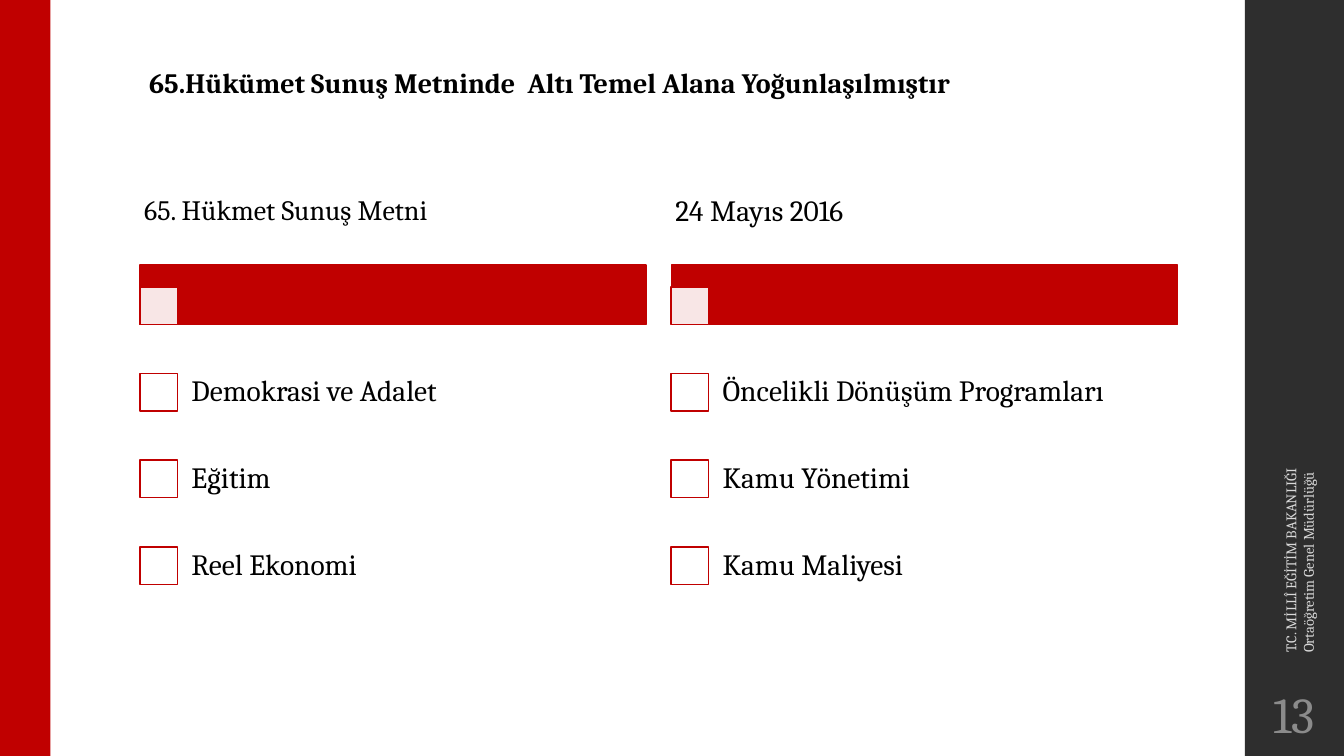
"""Builds the slide on the six focus areas of the government programme."""
from lxml import etree
from pptx import Presentation
from pptx.dml.color import RGBColor
from pptx.enum.shapes import MSO_SHAPE
from pptx.enum.text import MSO_ANCHOR, MSO_AUTO_SIZE, PP_ALIGN
from pptx.oxml.ns import qn
from pptx.util import Pt

TITLE = "65.Hükümet Sunuş Metninde  Altı Temel Alana Yoğunlaşılmıştır"
COLUMNS = [
    ("65. Hükmet Sunuş Metni", 20,
     ["Demokrasi ve Adalet", "Eğitim", "Reel Ekonomi"]),
    ("24 Mayıs 2016", 21,
     ["Öncelikli Dönüşüm Programları", "Kamu Yönetimi", "Kamu Maliyesi"]),
]
MINISTRY = ["T.C. MİLLÎ EĞİTİM BAKANLIĞI", "Ortaöğretim Genel Müdürlüğü"]
PAGE = "13"

FONT = "Cambria"
RED = RGBColor(0xC0, 0x00, 0x00)
DARK = RGBColor(0x2E, 0x2E, 0x2E)
WHITE = RGBColor(0xFF, 0xFF, 0xFF)
BLACK = RGBColor(0x00, 0x00, 0x00)
GREY = RGBColor(0x8B, 0x8B, 0x8B)
PALE = RGBColor(0xD8, 0xD8, 0xD8)
RECT = MSO_SHAPE.RECTANGLE
MIDDLE, BOTTOM = MSO_ANCHOR.MIDDLE, MSO_ANCHOR.BOTTOM
LEFT, CENTER = PP_ALIGN.LEFT, PP_ALIGN.CENTER
NO_FIT = MSO_AUTO_SIZE.NONE

SLIDE_W, SLIDE_H = 960, 540
SIDE_X = 889.2
COL_X, COL_STEP, COL_W = 100.08, 379.44, 361.44
HEAD_Y, HEAD_H = 113.04, 76.32
BAR_Y, BAR_H = 189.36, 42.48
BOX = 26.64
ROW_Y, ROW_H = 249.12, 62
ITEM_DX = 25.2


def add_rect(slide, x, y, w, h, fill, line=None, opacity=None):
    sp = slide.shapes.add_shape(RECT, Pt(x), Pt(y), Pt(w), Pt(h))
    sp.shadow.inherit = False
    sp.fill.solid()
    sp.fill.fore_color.rgb = fill
    if opacity is not None:
        clr = sp._element.spPr.find(".//" + qn("a:srgbClr"))
        etree.SubElement(clr, qn("a:alpha"), val=str(opacity * 1000))
    if line is None:
        sp.line.fill.background()
    else:
        sp.line.color.rgb = line
        sp.line.width = Pt(1.1)


def put_text(sp, lines, size, color=BLACK, bold=False, align=LEFT,
             anchor=MIDDLE, inset=(7.2, 3.6), spacing=None):
    tf = sp.text_frame
    tf.word_wrap = True
    tf.auto_size = NO_FIT
    tf.vertical_anchor = anchor
    tf.margin_left = tf.margin_right = Pt(inset[0])
    tf.margin_top = tf.margin_bottom = Pt(inset[1])
    for i, line in enumerate(lines):
        p = tf.add_paragraph() if i else tf.paragraphs[0]
        p.alignment = align
        if spacing:
            p.line_spacing = spacing
        r = p.add_run()
        r.text = line
        r.font.name = FONT
        r.font.size = Pt(size)
        r.font.bold = bold
        r.font.color.rgb = color


def add_text(slide, x, y, w, h, lines, size, **fmt):
    sp = slide.shapes.add_textbox(Pt(x), Pt(y), Pt(w), Pt(h))
    put_text(sp, lines, size, **fmt)
    return sp


def add_column(slide, x, heading, size, items):
    add_rect(slide, x, BAR_Y, COL_W, BAR_H, RED, RED)
    add_rect(slide, x, BAR_Y + BAR_H - BOX, BOX, BOX, WHITE, RED, opacity=90)
    add_text(slide, x, HEAD_Y, COL_W, HEAD_H, [heading], size,
             inset=(2.88, 2.16), spacing=0.9)
    for i, item in enumerate(items):
        y = ROW_Y + i * ROW_H
        add_rect(slide, x, y + (ROW_H - BOX) / 2, BOX, BOX, WHITE, RED)
        add_text(slide, x + ITEM_DX, y, COL_W - ITEM_DX, ROW_H, [item], 21,
                 inset=(11.52, 11.52), spacing=0.9)


def main():
    prs = Presentation()
    prs.slide_width, prs.slide_height = Pt(SLIDE_W), Pt(SLIDE_H)
    slide = prs.slides.add_slide(prs.slide_layouts[5])

    add_rect(slide, SIDE_X, 0, SLIDE_W - SIDE_X, SLIDE_H, DARK)
    add_rect(slide, 0, 0, 36, SLIDE_H, RED)

    title = slide.shapes.title
    title.left, title.top = Pt(99.36), Pt(38.88)
    title.width, title.height = Pt(741.6), Pt(35.28)
    put_text(title, [TITLE], 20, bold=True, anchor=BOTTOM)

    for i, (heading, size, items) in enumerate(COLUMNS):
        add_column(slide, COL_X + i * COL_STEP, heading, size, items)

    add_text(slide, SIDE_X, 486, SLIDE_W - SIDE_X, 46.8, [PAGE], 36,
             color=GREY, align=CENTER, inset=(3.6, 3.6))
    side = add_text(slide, 756.72, 284.4, 342.72, 35.28, MINISTRY, 10.5,
                    color=PALE)
    side.rotation = 270
    prs.save("out.pptx")


if __name__ == "__main__":
    main()
